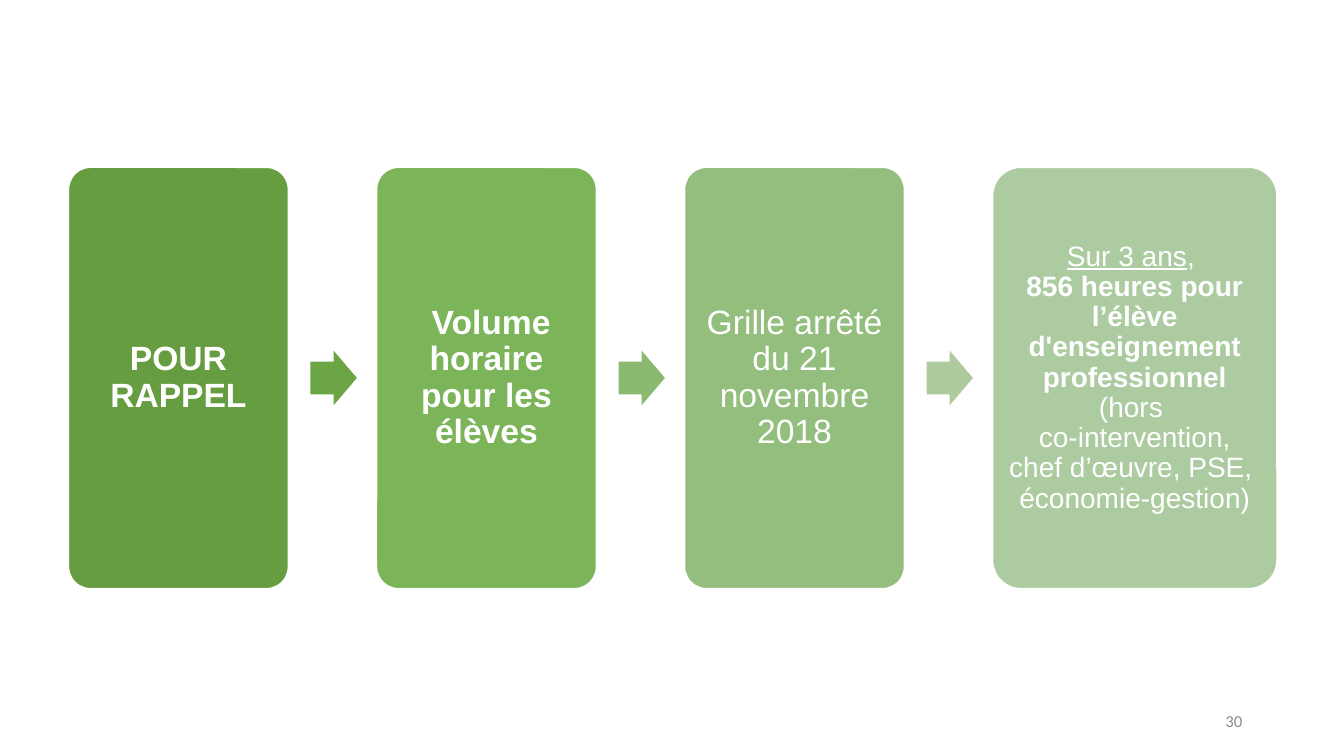
from pptx import Presentation
from pptx.dml.color import RGBColor
from pptx.enum.shapes import MSO_SHAPE as Shape
from pptx.enum.text import MSO_ANCHOR as Anchor, PP_ALIGN as Align
from pptx.util import Inches, Pt

COLORS = {"white": "FFFFFF", "page_number": "8C8C8C"}
CARD_FILLS = ["669D40", "7BB459", "94BE7D", "ADCBA0"]
ARROW_FILLS = ["6BA544", "8ABA6F", "ADCA9F"]

CARD_WIDTH, LAST_CARD_WIDTH, PITCH = 2.18, 2.82, 3.055
ARROW_OFFSET, ARROW_WIDTH, ARROW_HEIGHT = 2.4, 0.46, 0.54

# Each step: font size, inner margin, spans of (text, bold, underline)
STEPS = [
    (24, 0.1, [("POUR RAPPEL", True, False)]),
    (24, 0.1, [(" Volume horaire pour les élèves", True, False)]),
    (24, 0.1, [("Grille arrêté du 21 novembre 2018", False, False)]),
    (20, 0.08, [
        ("Sur 3 ans", False, True),
        (", \n", False, False),
        ("856 heures pour l’élève d'enseignement professionnel ", True, False),
        ("(hors \nco-intervention, chef d’œuvre, PSE, \néconomie-gestion)", False, False),
    ]),
]


def add_span(para, text, size, font, color, bold=False, underline=False):
    """Add text to the paragraph, turning each newline into a line break."""
    for index, line in enumerate(text.split("\n")):
        if index:
            para.add_line_break()
        if line:
            span = para.add_run()
            span.text = line
            span.font.size = Pt(size)
            span.font.name = font
            span.font.bold = bold
            span.font.underline = underline
            span.font.color.rgb = RGBColor.from_string(color)


def add_filled(page, kind, box, fill, adjustments):
    shape = page.shapes.add_shape(kind, *map(Inches, box))
    for index, value in enumerate(adjustments):
        shape.adjustments[index] = value
    shape.shadow.inherit = False
    shape.fill.solid()
    shape.fill.fore_color.rgb = RGBColor.from_string(fill)
    shape.line.fill.background()
    return shape


def add_card(page, box, fill, step):
    size, margin, spans = step
    card = add_filled(page, Shape.ROUNDED_RECTANGLE, box, fill, [0.1])
    card.line.color.rgb = RGBColor.from_string(COLORS["white"])
    card.line.width = Pt(1)
    frame = card.text_frame
    frame.word_wrap = True
    frame.vertical_anchor = Anchor.MIDDLE
    frame.margin_left = frame.margin_right = Inches(margin)
    frame.margin_top = frame.margin_bottom = Inches(margin)
    para = frame.paragraphs[0]
    para.alignment = Align.CENTER
    para.line_spacing = 0.9
    for text, bold, underline in spans:
        add_span(para, text, size, "Arial", COLORS["white"], bold, underline)


def add_process(page, left, top, height):
    """Place the cards at equal steps, with an arrow in each gap."""
    for index, (step, fill) in enumerate(zip(STEPS, CARD_FILLS)):
        card_left = left + index * PITCH
        is_last = index == len(STEPS) - 1
        width = LAST_CARD_WIDTH if is_last else CARD_WIDTH
        add_card(page, (card_left, top, width, height), fill, step)
        if not is_last:
            arrow_top = top + (height - ARROW_HEIGHT) / 2
            arrow_box = (card_left + ARROW_OFFSET, arrow_top, ARROW_WIDTH, ARROW_HEIGHT)
            add_filled(page, Shape.RIGHT_ARROW, arrow_box, ARROW_FILLS[index], [0.6, 0.5])


def add_page_number(page, box, number):
    frame = page.shapes.add_textbox(*map(Inches, box)).text_frame
    frame.word_wrap = True
    frame.vertical_anchor = Anchor.MIDDLE
    para = frame.paragraphs[0]
    para.alignment = Align.RIGHT
    add_span(para, number, 12, "Calibri", COLORS["page_number"])


def main():
    deck = Presentation()
    deck.slide_width, deck.slide_height = Inches(13.33), Inches(7.5)
    page = deck.slides.add_slide(deck.slide_layouts[6])
    add_process(page, 0.68, 1.66, 4.18)
    add_page_number(page, (9.42, 6.95, 3, 0.4), "30")
    deck.save("out.pptx")


if __name__ == "__main__":
    main()
